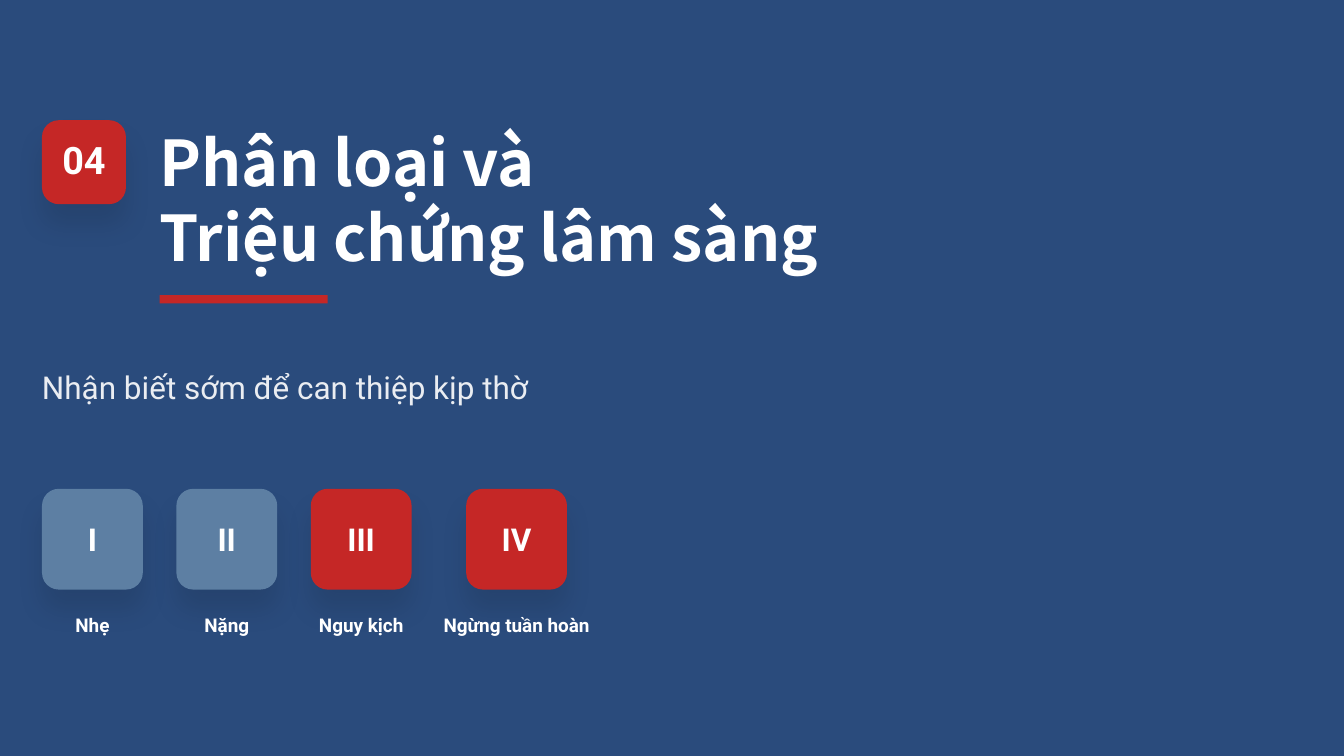
from dataclasses import dataclass

from lxml.etree import SubElement
from pptx import Presentation
from pptx.dml.color import RGBColor as RGB
from pptx.enum.shapes import MSO_SHAPE as Shape
from pptx.enum.text import MSO_ANCHOR as Anchor, PP_ALIGN as Align
from pptx.oxml.ns import qn
from pptx.util import Pt


@dataclass(frozen=True)
class Theme:
    navy: RGB = RGB.from_string("2A4B7C")
    red: RGB = RGB.from_string("C52726")
    steel: RGB = RGB.from_string("5D7FA3")
    white: RGB = RGB.from_string("FFFFFF")
    heading_font: str = "Noto Sans CJK SC"
    body_font: str = "Roboto"
    title: int = 60
    number: int = 36
    body: int = 30
    label: int = 18
    radius: int = 16


THEME = Theme()


def apply(target, values):
    for name, value in values.items():
        setattr(target, name, value)


def add_soft_shadow(shape):
    effects = shape.fill._xPr.find(qn("a:effectLst"))
    shadow = SubElement(effects, qn("a:outerShdw"), blurRad=str(Pt(25)),
                        dist=str(Pt(20)), dir="5400000", algn="ctr", rotWithShape="0")
    color = SubElement(shadow, qn("a:srgbClr"), val="000000")
    SubElement(color, qn("a:alpha"), val="10000")


def add_block(slide, box, color, rounded=False):
    kind = Shape.ROUNDED_RECTANGLE if rounded else Shape.RECTANGLE
    block = slide.shapes.add_shape(kind, *map(Pt, box))
    block.shadow.inherit = False
    block.fill.solid()
    block.fill.fore_color.rgb = color
    block.line.fill.background()
    if rounded:
        block.adjustments[0] = THEME.radius / min(box[2:])
        add_soft_shadow(block)


def add_text(slide, box, lines, size, font=THEME.body_font, bold=True,
             align=Align.CENTER, spacing=None, opacity=None):
    frame = slide.shapes.add_textbox(*map(Pt, box)).text_frame
    apply(frame, {"word_wrap": True, "vertical_anchor": Anchor.MIDDLE,
                  "margin_left": 0, "margin_right": 0,
                  "margin_top": 0, "margin_bottom": 0})
    for index, line in enumerate(lines):
        paragraph = frame.add_paragraph() if index else frame.paragraphs[0]
        apply(paragraph, {"alignment": align, "line_spacing": spacing})
        run = paragraph.add_run()
        run.text = line
        apply(run.font, {"name": font, "size": Pt(size), "bold": bold})
        run.font.color.rgb = THEME.white
        if opacity:
            color = run.font.fill._xPr.find(f".//{qn('a:srgbClr')}")
            SubElement(color, qn("a:alpha"), val=str(opacity * 1000))


def add_heading(slide, box, number, lines):
    left, top, width, height = box
    badge, overhang, indent = 80, 9, 112
    # Section number badge
    add_block(slide, (left, top, badge, badge), THEME.red, rounded=True)
    add_text(slide, (left - overhang, top, badge + 2 * overhang, badge), [number],
             THEME.number, spacing=0.9)
    # Title and underline
    add_text(slide, (left + indent, top, width - indent, height), lines,
             THEME.title, font=THEME.heading_font, align=Align.LEFT)
    add_block(slide, (left + indent, top + height + 16.5, 160, 8), THEME.red)


def add_subtitle(slide, box, text):
    add_text(slide, box, [text], THEME.body, bold=False, align=Align.LEFT,
             spacing=1.4, opacity=90)


def add_grades(slide, box, grades):
    left, top, _, height = box
    side, gap, numeral_height, label_height, overhang = 96, 32, 36, 28, 5
    for numeral, numeral_width, label, column, color in grades:
        middle = left + column / 2
        # Grade card with its numeral
        add_block(slide, (middle - side / 2, top, side, side), color, rounded=True)
        add_text(slide, (middle - numeral_width / 2, top + (side - numeral_height) / 2,
                         numeral_width, numeral_height), [numeral], THEME.body)
        # Severity label below the card
        add_text(slide, (left - overhang, top + height - label_height,
                         column + 2 * overhang, label_height), [label],
                 THEME.label, spacing=1.3)
        left += column + gap


def main():
    deck = Presentation()
    apply(deck, {"slide_width": Pt(1280), "slide_height": Pt(720)})
    slide = deck.slides.add_slide(deck.slide_layouts[6])
    slide.background.fill.solid()
    slide.background.fill.fore_color.rgb = THEME.navy

    add_heading(slide, (40, 114.5, 768, 150), "04",
                ["Phân loại và", "Triệu chứng lâm sàng"])
    add_subtitle(slide, (40, 337, 911, 49), "Nhận biết sớm để can thiệp kịp thờ")
    # Numeral, numeral width, label, column width, card colour
    add_grades(slide, (40, 465.5, 520, 140), [
        ("I", 23, "Nhẹ", 96, THEME.steel),
        ("II", 31, "Nặng", 96, THEME.steel),
        ("III", 40, "Nguy kịch", 96, THEME.red),
        ("IV", 43, "Ngừng tuần hoàn", 136, THEME.red),
    ])
    deck.save("out.pptx")


if __name__ == "__main__":
    main()
